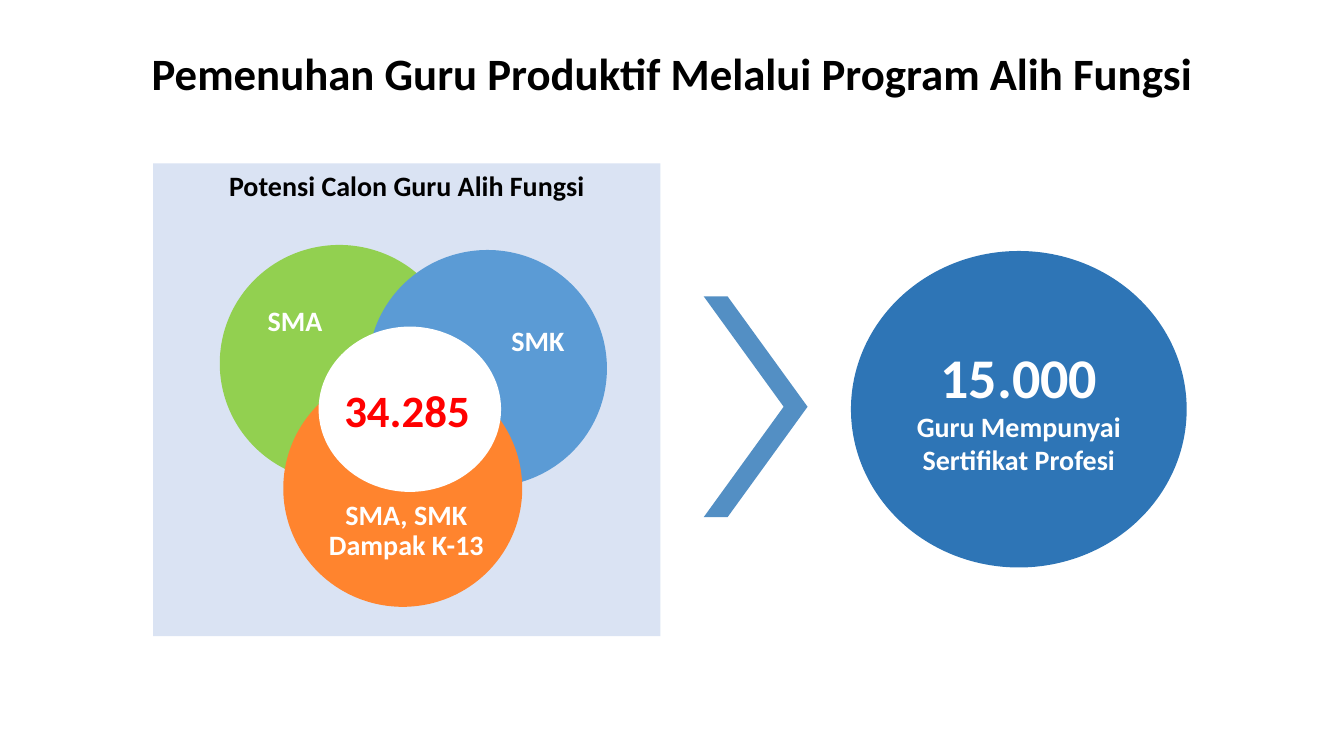
from dataclasses import dataclass

from pptx import Presentation
from pptx.dml.color import RGBColor
from pptx.enum.shapes import MSO_SHAPE
from pptx.enum.text import MSO_ANCHOR, PP_ALIGN
from pptx.shapes.autoshape import Shape
from pptx.slide import Slide
from pptx.text.text import TextFrame
from pptx.util import Inches, Pt


@dataclass(frozen=True)
class Theme:
    font: str = "Calibri"
    black: str = "000000"
    white: str = "FFFFFF"
    red: str = "FF0000"
    panel: str = "DAE3F3"
    green: str = "92D050"
    blue: str = "5B9BD5"
    orange: str = "FF842E"
    chevron: str = "538FC4"
    result: str = "2E75B6"
    title_size: int = 32
    result_size: int = 40
    total_size: int = 32
    body_size: int = 20


@dataclass(frozen=True)
class Box:
    left: float
    top: float
    width: float
    height: float


@dataclass(frozen=True)
class Source:
    """One circle of teacher candidates with its label."""
    left: float
    top: float
    color: str
    label: str
    label_box: Box
    wrap: bool = False
    line_spacing: float = 1.0


THEME = Theme()
CIRCLE_WIDTH, CIRCLE_HEIGHT = 2.37, 2.35
SOURCES = [
    Source(2.18, 2.43, THEME.green, "SMA", Box(2.55, 2.96, 0.75, 0.44)),
    Source(3.65, 2.48, THEME.blue, "SMK", Box(4.97, 3.16, 0.73, 0.44)),
    Source(2.81, 3.67, THEME.orange, "SMA, SMK Dampak K-13",
           Box(3.02, 4.92, 2.02, 0.71), wrap=True, line_spacing=0.9),
]


def place(box: Box) -> tuple[int, int, int, int]:
    return (Inches(box.left), Inches(box.top),
            Inches(box.width), Inches(box.height))


def write(frame: TextFrame, text: str, *, size: int = THEME.body_size,
          color: str = THEME.white, align: PP_ALIGN = PP_ALIGN.CENTER,
          anchor: MSO_ANCHOR = MSO_ANCHOR.TOP, wrap: bool = True,
          line_spacing: float = 1.0, append: bool = False) -> None:
    frame.word_wrap = wrap
    frame.vertical_anchor = anchor
    paragraph = frame.add_paragraph() if append else frame.paragraphs[0]
    paragraph.alignment = align
    paragraph.line_spacing = line_spacing
    run = paragraph.add_run()
    run.text = text
    run.font.name = THEME.font
    run.font.size = Pt(size)
    run.font.bold = True
    run.font.color.rgb = RGBColor.from_string(color)


def add_filled(slide: Slide, kind: MSO_SHAPE, box: Box, color: str) -> Shape:
    shape = slide.shapes.add_shape(kind, *place(box))
    shape.shadow.inherit = False
    shape.fill.solid()
    shape.fill.fore_color.rgb = RGBColor.from_string(color)
    shape.line.fill.background()
    return shape


def add_label(slide: Slide, box: Box) -> TextFrame:
    return slide.shapes.add_textbox(*place(box)).text_frame


def add_title(slide: Slide) -> None:
    title = slide.shapes.title
    title.left, title.top, title.width, title.height = place(
        Box(0.92, 0.4, 11.5, 0.7))
    write(title.text_frame,
          "Pemenuhan Guru Produktif Melalui Program Alih Fungsi",
          size=THEME.title_size, color=THEME.black,
          anchor=MSO_ANCHOR.MIDDLE, line_spacing=0.9)


def add_candidates(slide: Slide) -> None:
    # Panel with heading
    panel = add_filled(slide, MSO_SHAPE.RECTANGLE,
                       Box(1.52, 1.62, 5.03, 4.69), THEME.panel)
    write(panel.text_frame, "Potensi Calon Guru Alih Fungsi",
          color=THEME.black)

    # Overlapping circles
    for source in SOURCES:
        add_filled(slide, MSO_SHAPE.OVAL,
                   Box(source.left, source.top, CIRCLE_WIDTH, CIRCLE_HEIGHT),
                   source.color)

    # Total in the centre
    add_filled(slide, MSO_SHAPE.OVAL, Box(3.16, 3.24, 1.81, 1.64), THEME.white)
    write(add_label(slide, Box(3.3, 3.74, 1.46, 0.64)), "34.285",
          size=THEME.total_size, color=THEME.red, align=PP_ALIGN.RIGHT,
          anchor=MSO_ANCHOR.MIDDLE, wrap=False)

    # Circle labels
    for source in SOURCES:
        write(add_label(slide, source.label_box), source.label,
              wrap=source.wrap, line_spacing=source.line_spacing)


def add_result(slide: Slide) -> None:
    # Chevron towards the result
    chevron = add_filled(slide, MSO_SHAPE.CHEVRON,
                         Box(6.98, 2.94, 1.03, 2.19), THEME.chevron)
    chevron.adjustments[0] = 0.77

    # Certified teachers
    result = add_filled(slide, MSO_SHAPE.OVAL,
                        Box(8.44, 2.49, 3.33, 3.14), THEME.result)
    frame = result.text_frame
    frame.margin_left = frame.margin_right = Inches(0)
    write(frame, "15.000", size=THEME.result_size, anchor=MSO_ANCHOR.MIDDLE)
    write(frame, "Guru Mempunyai Sertifikat Profesi",
          anchor=MSO_ANCHOR.MIDDLE, append=True)


def main() -> None:
    presentation = Presentation()
    presentation.slide_width = Inches(13.33)
    presentation.slide_height = Inches(7.5)
    title_only = presentation.slide_layouts.get_by_name("Title Only")
    slide = presentation.slides.add_slide(title_only)
    add_title(slide)
    add_candidates(slide)
    add_result(slide)
    presentation.save("out.pptx")


if __name__ == "__main__":
    main()
